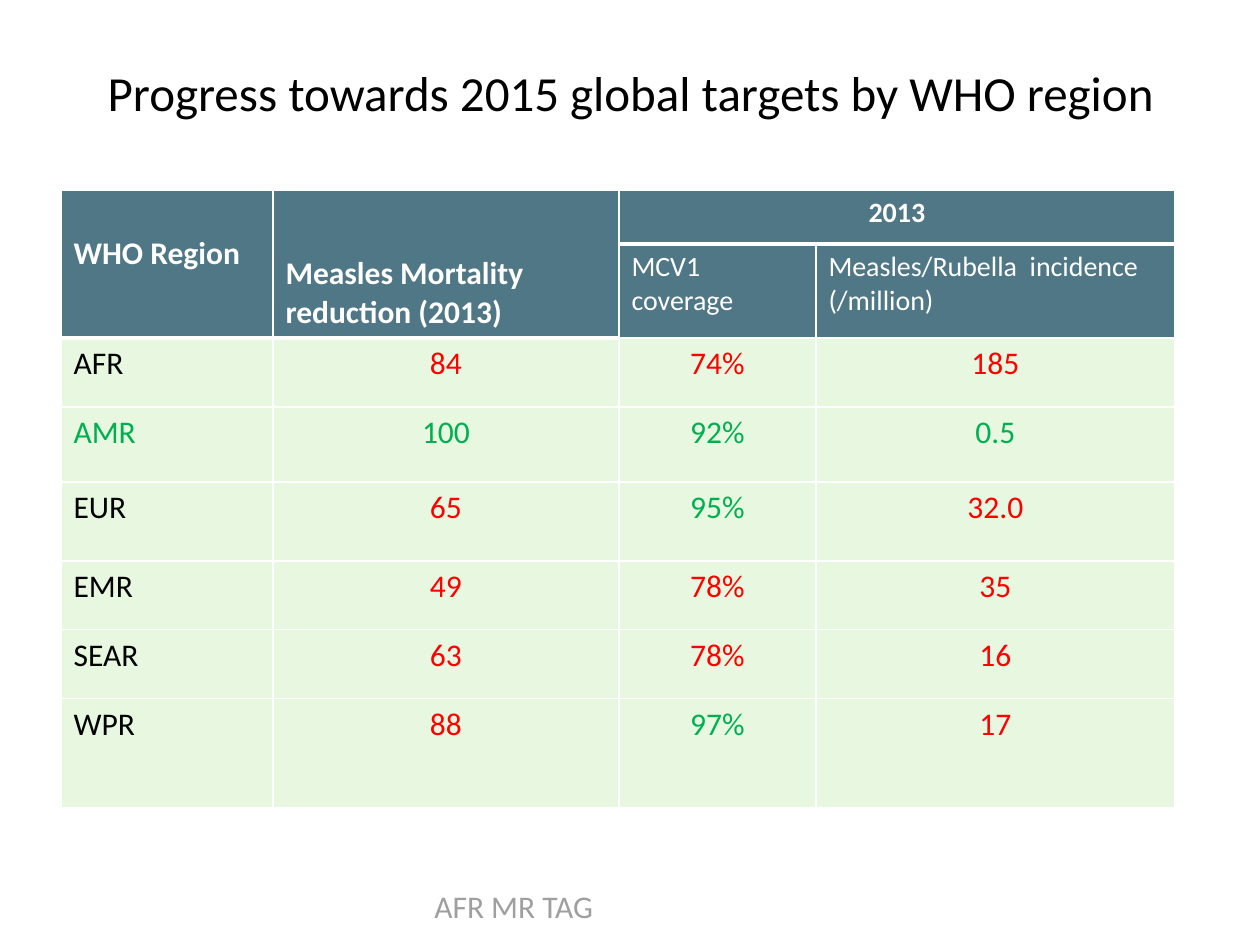
from dataclasses import dataclass

from lxml import etree
from pptx import Presentation
from pptx.dml.color import RGBColor
from pptx.enum.text import MSO_ANCHOR, PP_ALIGN
from pptx.oxml.ns import qn
from pptx.util import Emu, Pt

LEFT, CENTER = PP_ALIGN.LEFT, PP_ALIGN.CENTER
TOP, MIDDLE, BOTTOM = MSO_ANCHOR.TOP, MSO_ANCHOR.MIDDLE, MSO_ANCHOR.BOTTOM
WHITE = RGBColor(0xFF, 0xFF, 0xFF)
BLACK = RGBColor(0x00, 0x00, 0x00)
GRAY = RGBColor(0x9F, 0x9F, 0x9F)
TEAL = RGBColor(0x4F, 0x77, 0x85)
MINT = RGBColor(0xE8, 0xF7, 0xE0)
RED = RGBColor(0xFF, 0x00, 0x00)
GREEN = RGBColor(0x00, 0xB0, 0x50)
FONT = "Calibri"
THIN, THICK = Pt(1), Pt(3)
WIDTHS = (212, 346, 197, 359)
HEADS = (54, 94)


@dataclass(frozen=True)
class Head:
    row: int
    col: int
    text: str
    size: int
    bold: bool = True
    align: PP_ALIGN = LEFT
    anchor: MSO_ANCHOR = TOP
    rows: int = 1
    cols: int = 1
    inset: int = 6


@dataclass(frozen=True)
class Region:
    name: str
    height: int
    values: tuple[str, ...]
    met: tuple[bool, ...]


TITLES = (
    Head(0, 0, "WHO Region", 18, rows=2, inset=45),
    Head(0, 1, "Measles Mortality reduction (2013)", 18, anchor=BOTTOM, rows=2),
    Head(0, 2, "2013", 16, align=CENTER, cols=2),
    Head(1, 2, "MCV1 coverage", 16, bold=False),
    Head(1, 3, "Measles/Rubella  incidence (/million)", 16, bold=False),
)
REGIONS = (
    Region("AFR", 69, ("84", "74%", "185"), (False, False, False)),
    Region("AMR", 75, ("100", "92%", "0.5"), (True, True, True)),
    Region("EUR", 79, ("65", "95%", "32.0"), (False, True, False)),
    Region("EMR", 69, ("49", "78%", "35"), (False, False, False)),
    Region("SEAR", 69, ("63", "78%", "16"), (False, False, False)),
    Region("WPR", 109, ("88", "97%", "17"), (False, True, False)),
)


def px(count: int) -> Emu:
    return Emu(round(count * 914400 / 126))


def write(frame, text: str, size: int, color: RGBColor,
          align: PP_ALIGN = LEFT, bold: bool = False) -> None:
    para = frame.paragraphs[0]
    para.alignment = align
    run = para.add_run()
    run.text = text
    run.font.name = FONT
    run.font.size = Pt(size)
    run.font.bold = bold
    run.font.color.rgb = color


def rule(row: int, col: int) -> int:
    return THICK if row == 0 or (row == 1 and col < 2) else THIN


def paint(cell, row: int, col: int) -> None:
    cell.fill.solid()
    cell.fill.fore_color.rgb = TEAL if row < len(HEADS) else MINT
    props = cell._tc.get_or_add_tcPr()
    above = rule(row - 1, col) if row else THIN
    sides = (("L", THIN), ("R", THIN), ("T", above), ("B", rule(row, col)))
    for spot, (side, width) in enumerate(sides):
        line = etree.Element(qn(f"a:ln{side}"), w=str(int(width)))
        fill = etree.SubElement(line, qn("a:solidFill"))
        etree.SubElement(fill, qn("a:srgbClr"), val=str(WHITE))
        props.insert(spot, line)


def put_head(table, head: Head) -> None:
    cell = table.cell(head.row, head.col)
    if head.rows > 1 or head.cols > 1:
        cell.merge(table.cell(head.row + head.rows - 1,
                              head.col + head.cols - 1))
    cell.vertical_anchor = head.anchor
    cell.margin_top = px(head.inset)
    write(cell.text_frame, head.text, head.size, WHITE, head.align, head.bold)


def put_region(table, row: int, region: Region) -> None:
    tint = GREEN if all(region.met) else BLACK
    write(table.cell(row, 0).text_frame, region.name, 18, tint)
    for col, (value, met) in enumerate(zip(region.values, region.met), 1):
        write(table.cell(row, col).text_frame, value, 18,
              GREEN if met else RED, CENTER)


def add_grid(slide) -> None:
    heights = HEADS + tuple(region.height for region in REGIONS)
    table = slide.shapes.add_table(
        len(heights), len(WIDTHS), px(61), px(190),
        px(sum(WIDTHS)), px(sum(heights))).table
    table.first_row = False
    table.horz_banding = False
    for col, width in enumerate(WIDTHS):
        table.columns[col].width = px(width)
    for row, height in enumerate(heights):
        table.rows[row].height = px(height)
        for col in range(len(WIDTHS)):
            paint(table.cell(row, col), row, col)
    for head in TITLES:
        put_head(table, head)
    for row, region in enumerate(REGIONS, len(HEADS)):
        put_region(table, row, region)


def main() -> None:
    deck = Presentation()
    deck.slide_width, deck.slide_height = px(1260), px(945)
    slide = deck.slides.add_slide(deck.slide_layouts[5])

    title = slide.shapes.title
    title.left, title.top = px(25), px(38)
    title.width, title.height = px(1211), px(107)
    title.text_frame.vertical_anchor = MIDDLE
    write(title.text_frame,
          "Progress towards 2015 global targets by WHO region",
          28, BLACK, CENTER)

    add_grid(slide)

    foot = slide.shapes.add_textbox(px(422), px(881), px(292), px(50))
    foot.text_frame.word_wrap = True
    write(foot.text_frame, "AFR MR TAG", 18, GRAY)

    deck.save("out.pptx")


if __name__ == "__main__":
    main()
